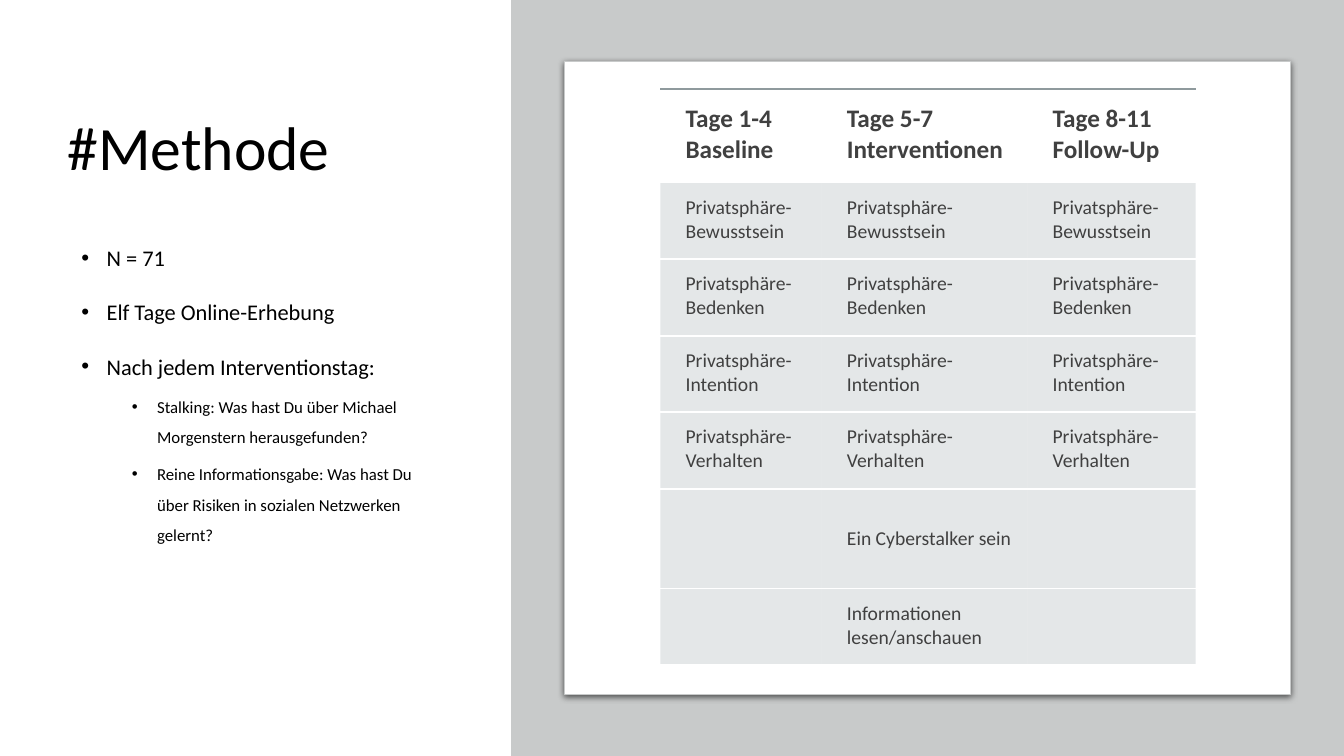
import pptx
import pptx.dml.color
import pptx.enum.shapes
import pptx.enum.text
import pptx.oxml
import pptx.oxml.ns
import pptx.util
from pptx.util import Inches, Pt

FONT = "Calibri"
COLORS = {
    "text": "000000",
    "table_text": "404040",
    "panel": "C8CACA",
    "white": "FFFFFF",
    "rule": "8F9A9D",
    "cell": "B4BCBE",
}
BULLETS = [
    (0, "N = 71"),
    (0, "Elf Tage Online-Erhebung"),
    (0, "Nach jedem Interventionstag:"),
    (1, "Stalking: Was hast Du über Michael Morgenstern herausgefunden?"),
    (1, "Reine Informationsgabe: Was hast Du über Risiken in sozialen Netzwerken gelernt?"),
]
# level: indent, size, space before
LEVELS = {0: (0.25, 16, 10), 1: (0.75, 12, 5)}
TOPICS = ["Bewusstsein", "Bedenken", "Intention", "Verhalten"]
TABLE_ROWS = [
    ["Tage 1-4 Baseline", "Tage 5-7 Interventionen", "Tage 8-11 Follow-Up"],
    *[[f"Privatsphäre-{topic}"] * 3 for topic in TOPICS],
    ["", "Ein Cyberstalker sein", ""],
    ["", "Informationen lesen/anschauen", ""],
]
COLUMN_WIDTHS = [1.6, 2.04, 1.67]
ROW_HEIGHTS = [0.93, 0.76, 0.76, 0.76, 0.76, 0.99, 0.76]


def rgb(name):
    return pptx.dml.color.RGBColor.from_string(COLORS[name])


def append_xml(parent, xml):
    namespace = pptx.oxml.ns.nsdecls("a")
    parent.append(pptx.oxml.parse_xml(xml.replace(">", f" {namespace}>", 1)))


def add_run(paragraph, text, size, color="text", bold=False):
    run = paragraph.add_run()
    run.text = text
    run.font.name = FONT
    run.font.size = Pt(size)
    run.font.bold = bold
    run.font.color.rgb = rgb(color)


def add_text_frame(slide, left, top, width, height):
    box = slide.shapes.add_textbox(Inches(left), Inches(top), Inches(width), Inches(height))
    box.text_frame.word_wrap = True
    return box.text_frame


def add_title(slide, left, top, width, height):
    frame = add_text_frame(slide, left, top, width, height)
    frame.vertical_anchor = pptx.enum.text.MSO_ANCHOR.MIDDLE
    frame.paragraphs[0].line_spacing = 0.9
    add_run(frame.paragraphs[0], "#Methode", 44)


def add_bullets(slide, left, top, width, height):
    frame = add_text_frame(slide, left, top, width, height)
    for index, (level, text) in enumerate(BULLETS):
        indent, size, space = LEVELS[level]
        paragraph = frame.add_paragraph() if index else frame.paragraphs[0]
        paragraph.level = level
        paragraph.line_spacing = 1.5
        paragraph.space_before = Pt(space if index else 0)
        properties = paragraph._p.get_or_add_pPr()
        properties.set("marL", str(Inches(indent)))
        properties.set("indent", str(Inches(-0.25)))
        append_xml(properties, '<a:buFont typeface="Arial"></a:buFont>')
        append_xml(properties, '<a:buChar char="•"></a:buChar>')
        add_run(paragraph, text, size)


def add_block(slide, kind, fill, left, top, width, height):
    block = slide.shapes.add_shape(
        kind, Inches(left), Inches(top), Inches(width), Inches(height))
    block.shadow.inherit = False
    block.fill.solid()
    block.fill.fore_color.rgb = rgb(fill)
    block.line.fill.background()
    return block


def add_card(slide, left, top, width, height):
    """White card with a thin outline and a soft shadow below."""
    kind = pptx.enum.shapes.MSO_SHAPE.ROUNDED_RECTANGLE
    card = add_block(slide, kind, "white", left, top, width, height)
    card.adjustments[0] = 0
    card.line.color.rgb = rgb("panel")
    card.line.width = Pt(0.75)
    effects = card._element.spPr.find(pptx.oxml.ns.qn("a:effectLst"))
    append_xml(effects, (
        f'<a:outerShdw blurRad="{Pt(4.5)}" dist="{Pt(1.5)}" dir="5400000" algn="t" rotWithShape="0">'
        '<a:srgbClr val="000000"><a:alpha val="63000"/></a:srgbClr></a:outerShdw>'))


def set_borders(cell, top, top_alpha):
    properties = cell._tc.get_or_add_tcPr()
    for side in ("lnL", "lnR"):
        append_xml(properties, f'<a:{side} w="0"><a:noFill/></a:{side}>')
    for side, color, alpha in (("lnT", top, top_alpha), ("lnB", "white", 100)):
        append_xml(properties, (
            f'<a:{side} w="{Pt(1.5)}"><a:solidFill><a:srgbClr val="{COLORS[color]}">'
            f'<a:alpha val="{alpha * 1000}"/></a:srgbClr></a:solidFill></a:{side}>'))


def format_cell(cell, text, is_header):
    margin = Inches(0.15 if is_header else 0.13)
    cell.margin_left = Inches(0.25)
    cell.margin_top = cell.margin_right = cell.margin_bottom = margin
    if is_header:
        set_borders(cell, "rule", 60)
        cell.fill.background()
    else:
        set_borders(cell, "white", 100)
        cell.fill.solid()
        cell.fill.fore_color.rgb = rgb("cell")
        color = cell._tc.tcPr.find(pptx.oxml.ns.qn("a:solidFill"))[0]
        append_xml(color, '<a:alpha val="35000"></a:alpha>')
    if text:
        add_run(cell.text_frame.paragraphs[0], text, 18 if is_header else 14,
                "table_text", is_header)


def add_schedule(slide, left, top):
    table = slide.shapes.add_table(
        len(ROW_HEIGHTS), len(COLUMN_WIDTHS), Inches(left), Inches(top),
        Inches(sum(COLUMN_WIDTHS)), Inches(sum(ROW_HEIGHTS))).table
    table.first_row = table.horz_banding = False
    for column, width in zip(table.columns, COLUMN_WIDTHS):
        column.width = Inches(width)
    for index, (row, height, texts) in enumerate(zip(table.rows, ROW_HEIGHTS, TABLE_ROWS)):
        row.height = Inches(height)
        for cell, text in zip(row.cells, texts):
            format_cell(cell, text, index == 0)
    table.cell(5, 1).vertical_anchor = pptx.enum.text.MSO_ANCHOR.MIDDLE


def add_schedule_panel(slide, left, top, width, height):
    add_block(slide, pptx.enum.shapes.MSO_SHAPE.RECTANGLE, "panel", left, top, width, height)
    add_card(slide, left + 0.53, top + 0.61, 7.2, 6.28)
    add_schedule(slide, left + 1.48, top + 0.88)


def main():
    presentation = pptx.Presentation()
    presentation.slide_width = Inches(13.33)
    presentation.slide_height = Inches(7.5)
    slide = presentation.slides.add_slide(presentation.slide_layouts[6])
    add_title(slide, 0.57, 0.61, 3.83, 1.77)
    add_bullets(slide, 0.71, 2.24, 3.83, 4.14)
    add_schedule_panel(slide, 5.07, 0, 8.26, 7.5)
    presentation.save("out.pptx")


if __name__ == "__main__":
    main()
